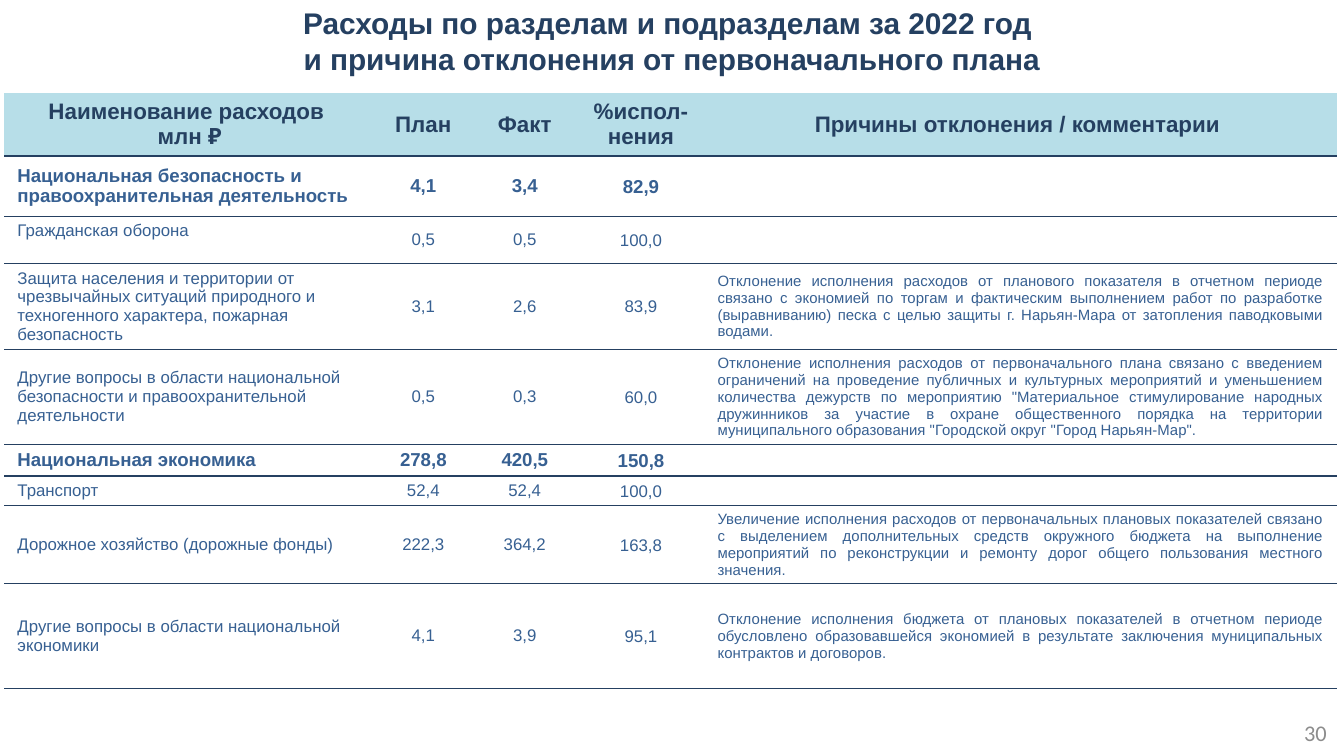
from lxml.etree import SubElement
from pptx import Presentation
from pptx.dml.color import RGBColor
from pptx.enum.text import MSO_ANCHOR, MSO_AUTO_SIZE, PP_ALIGN
from pptx.oxml.ns import qn
from pptx.util import Inches, Pt

NAVY, BLUE, AQUA, GREY = "254061", "376092", "B7DEE8", "8C8C8C"

COLUMN_WIDTHS = [2.76, 0.72, 0.79, 0.94, 4.71]
# Rows with long text grow to fit it
ROW_HEIGHTS = [0.47, 0.45, 0.35, 0.41, 0.7, 0.2, 0.2, 0.41, 0.78]
PERCENT_COLUMN, REASON_COLUMN = 3, 4

HEADINGS = ["Наименование расходов \nмлн ₽", "План", "Факт", "%испол-нения",
            "Причины отклонения / комментарии "]
SECTIONS = {"Национальная безопасность и правоохранительная деятельность",
            "Национальная экономика"}
CIVIL_DEFENCE = "Гражданская оборона"
EXPENSES = [
    ["Национальная безопасность и правоохранительная деятельность", "4,1", "3,4", "82,9", ""],
    [CIVIL_DEFENCE, "0,5", "0,5", "100,0", ""],
    ["Защита населения и территории от чрезвычайных ситуаций природного и техногенного "
     "характера, пожарная безопасность", "3,1", "2,6", "83,9",
     "Отклонение исполнения расходов от планового показателя в отчетном периоде связано "
     "с экономией по торгам и фактическим выполнением работ по разработке (выравниванию) "
     "песка с целью защиты г. Нарьян-Мара от затопления паводковыми водами."],
    ["Другие вопросы в области национальной безопасности и правоохранительной деятельности",
     "0,5", "0,3", "60,0",
     "Отклонение исполнения расходов от первоначального плана связано с введением "
     "ограничений на проведение публичных и культурных мероприятий и уменьшением "
     "количества дежурств по мероприятию \"Материальное стимулирование народных "
     "дружинников за участие в охране общественного порядка на территории "
     "муниципального образования \"Городской округ \"Город Нарьян-Мар\"."],
    ["Национальная экономика", "278,8", "420,5", "150,8", ""],
    ["Транспорт", "52,4", "52,4", "100,0", ""],
    ["Дорожное хозяйство (дорожные фонды)", "222,3", "364,2", "163,8",
     "Увеличение исполнения расходов от первоначальных плановых показателей связано "
     "с выделением дополнительных средств окружного бюджета на выполнение мероприятий "
     "по реконструкции и ремонту дорог общего пользования местного значения."],
    ["Другие вопросы в области национальной экономики", "4,1", "3,9", "95,1",
     "Отклонение исполнения бюджета от плановых показателей в отчетном периоде "
     "обусловлено образовавшейся экономией в результате заключения муниципальных "
     "контрактов и договоров."],
]


def rgb(code):
    return RGBColor.from_string(code)


def place(shape, left, top, width, height):
    shape.left, shape.top = Inches(left), Inches(top)
    shape.width, shape.height = Inches(width), Inches(height)


def write(frame, text, size, color, bold=False, align=PP_ALIGN.LEFT, font="Arial"):
    """Fill a text frame, one paragraph per line of text."""
    frame.word_wrap = True
    for index, line in enumerate(text.split("\n")):
        paragraph = frame.add_paragraph() if index else frame.paragraphs[0]
        paragraph.alignment = align
        if not line:
            # Keep an empty cell from stretching its row
            SubElement(paragraph._p, qn("a:endParaRPr"), sz=str(size * 100))
            continue
        run = paragraph.add_run()
        run.text = line
        run.font.size, run.font.name, run.font.bold = Pt(size), font, bold
        run.font.color.rgb = rgb(color)


def set_borders(cell, ruled):
    """Draw navy lines on the ruled sides and none on the others."""
    properties = cell._tc.get_or_add_tcPr()
    for side in "LRTB":
        line = SubElement(properties, qn(f"a:ln{side}"), w=str(Pt(1)))
        if side in ruled:
            fill = SubElement(line, qn("a:solidFill"))
            SubElement(fill, qn("a:srgbClr"), val=NAVY)
        else:
            SubElement(line, qn("a:noFill"))


def format_cell(cell, ruled, tight=False):
    cell.vertical_anchor = MSO_ANCHOR.MIDDLE
    insets = (0.01, 0.01, 0.01, 0) if tight else (0.1, 0.04, 0.1, 0.04)
    cell.margin_left, cell.margin_top, cell.margin_right, cell.margin_bottom = map(Inches, insets)
    set_borders(cell, ruled)


def add_title(slide, text):
    title = slide.shapes.title
    place(title, 0, 0, 10, 0.61)
    frame = title.text_frame
    frame.auto_size = MSO_AUTO_SIZE.NONE
    frame.vertical_anchor = MSO_ANCHOR.MIDDLE
    write(frame, text, 16, NAVY, True, PP_ALIGN.CENTER)


def add_expense_table(slide):
    table = slide.shapes.add_table(
        len(ROW_HEIGHTS), len(COLUMN_WIDTHS), Inches(0.03), Inches(0.69),
        Inches(sum(COLUMN_WIDTHS)), Inches(sum(ROW_HEIGHTS))).table
    table.horz_banding = False
    for column, width in zip(table.columns, COLUMN_WIDTHS):
        column.width = Inches(width)
    for row, height in zip(table.rows, ROW_HEIGHTS):
        row.height = Inches(height)

    # Heading row
    for column, heading in enumerate(HEADINGS):
        cell = table.cell(0, column)
        format_cell(cell, "B")
        cell.fill.solid()
        cell.fill.fore_color.rgb = rgb(AQUA)
        write(cell.text_frame, heading, 12, NAVY, True, PP_ALIGN.CENTER)

    # Sections in bold, their subsections below in regular type
    aligns = [PP_ALIGN.LEFT] + [PP_ALIGN.CENTER] * 3 + [PP_ALIGN.JUSTIFY]
    for row, expense in enumerate(EXPENSES, start=1):
        section = expense[0] in SECTIONS
        for column, text in enumerate(expense):
            cell = table.cell(row, column)
            format_cell(cell, "TB", tight=column == PERCENT_COLUMN)
            if text == CIVIL_DEFENCE:
                cell.vertical_anchor = MSO_ANCHOR.TOP
            cell.fill.background()
            size = 8 if column == REASON_COLUMN else 10 if section else 9
            write(cell.text_frame, text, size, BLUE, section, aligns[column])


def add_page_number(slide, number):
    box = slide.shapes.add_textbox(Inches(7.64), Inches(5.3), Inches(2.33), Inches(0.3))
    box.text_frame.vertical_anchor = MSO_ANCHOR.MIDDLE
    write(box.text_frame, number, 12, GREY, align=PP_ALIGN.RIGHT, font="Calibri")


def main():
    presentation = Presentation()
    # Widescreen, 16 to 9
    presentation.slide_width, presentation.slide_height = Inches(10), Inches(10 * 9 / 16)
    slide = presentation.slides.add_slide(presentation.slide_layouts[5])
    add_title(slide, "Расходы по разделам и подразделам за 2022 год \n"
                     "и причина отклонения от первоначального плана")
    add_expense_table(slide)
    add_page_number(slide, "30")
    presentation.save("out.pptx")


if __name__ == "__main__":
    main()
